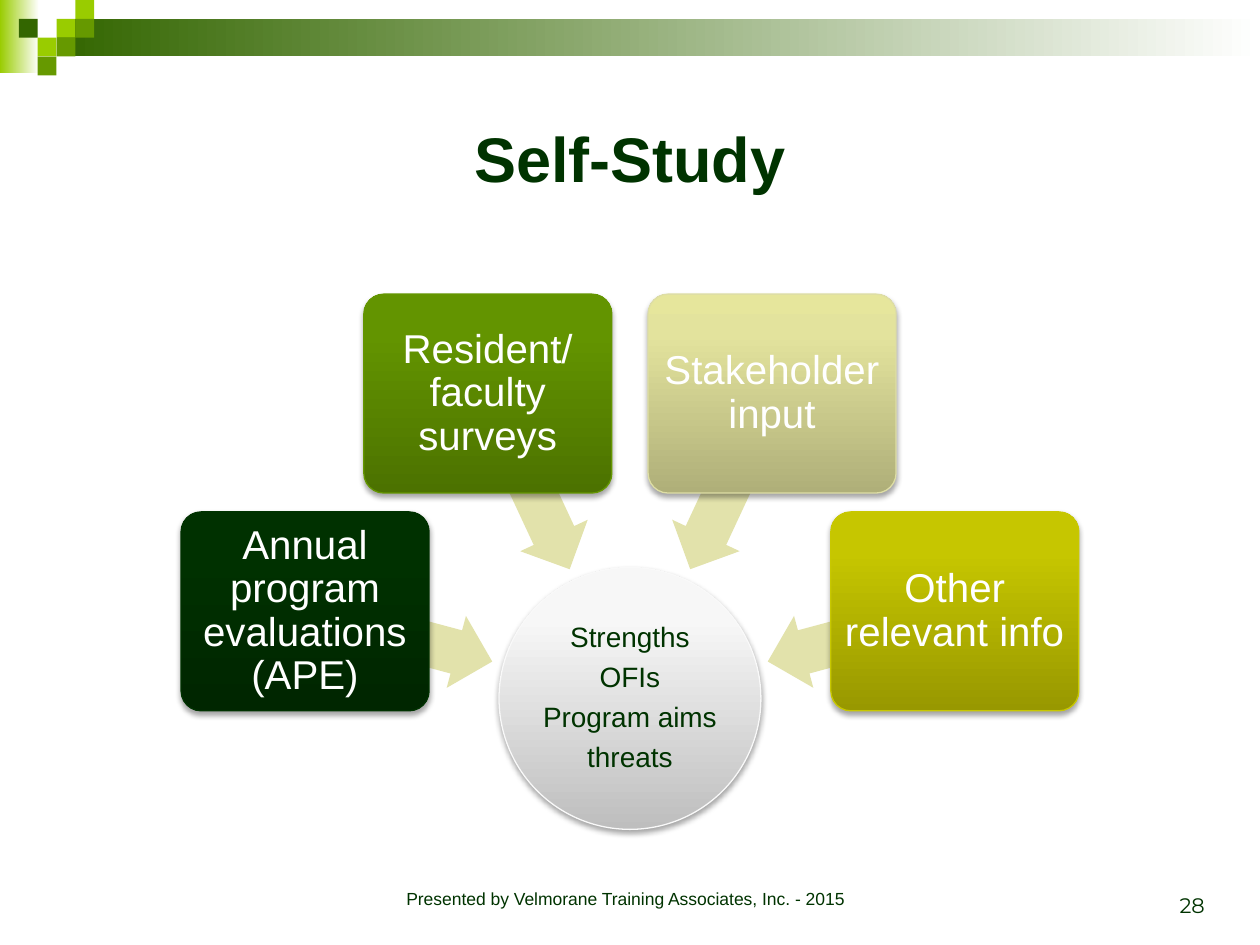
from dataclasses import dataclass
from math import cos, radians, sin

from lxml.etree import SubElement
from pptx import Presentation
from pptx.dml.color import RGBColor
from pptx.enum.shapes import MSO_SHAPE
from pptx.enum.text import MSO_ANCHOR, MSO_AUTO_SIZE, PP_ALIGN
from pptx.oxml.ns import qn
from pptx.util import Cm, Pt


@dataclass(frozen=True)
class Theme:
    font: str = "Arial"
    digit: str = "Montserrat"
    ink: str = "003300"
    white: str = "FFFFFF"
    lime: str = "99CC00"
    leaf: str = "669900"
    moss: str = "336600"
    arrow: str = "E2E2AB"
    title: int = 36
    box: int = 23
    hub: int = 16
    page: int = 12
    foot: int = 10


THEME = Theme()
HUB_X, HUB_Y, HUB_SIZE = 12.7, 14.08, 5.28
HUB_FILL = [(0, "BEBEBE"), (80, "F7F7F7"), (100, "F8F8F8")]
HUB_LINES = ["Strengths", "OFIs", "Program aims", "threats"]
BOX_W, BOX_H, BOX_RING = 5, 4.01, 6.78
ARROW_W, ARROW_H, ARROW_RING = 3.91, 1.5, 4.83
FIRST, STEP = 195, 50
BOXES = [
    ("Annual program evaluations (APE)", ["002600", "003100", "003200"], "003200"),
    ("Resident/faculty surveys", ["4C7200", "639400", "639500"], "649600"),
    ("Stakeholder input", ["AFAF79", "E3E39D", "E6E69C"], "DEDEA5"),
    ("Other relevant info", ["989800", "C6C600", "C7C700"], "C8C800"),
]
TILE = 0.38
TILES = [
    (3, 1, THEME.lime), (4, 0, THEME.lime), (4, 1, THEME.leaf), (2, 2, THEME.lime),
    (1, 1, THEME.moss), (3, 2, THEME.leaf), (2, 3, THEME.leaf),
]


def rgb(code):
    return RGBColor.from_string(code)


def write(frame, lines, size, color=THEME.ink, font=THEME.font, bold=False,
          align=PP_ALIGN.CENTER, anchor=MSO_ANCHOR.MIDDLE, inset=None,
          pitch=None, after=None):
    frame.word_wrap = True
    frame.auto_size = MSO_AUTO_SIZE.NONE
    frame.vertical_anchor = anchor
    if inset is not None:
        frame.margin_left = frame.margin_right = Cm(inset)
        frame.margin_top = frame.margin_bottom = Cm(inset)
    for i, line in enumerate(lines):
        para = frame.paragraphs[0] if i == 0 else frame.add_paragraph()
        para.alignment = align
        if pitch:
            para.line_spacing = pitch
        if after and i < len(lines) - 1:
            para.space_after = Pt(after)
        run = para.add_run()
        run.text = line
        run.font.name = font
        run.font.size = Pt(size)
        run.font.bold = bold
        run.font.color.rgb = rgb(color)


def add_shape(slide, kind, x, y, w, h, color=None):
    shape = slide.shapes.add_shape(kind, Cm(x), Cm(y), Cm(w), Cm(h))
    shape.shadow.inherit = False
    shape.line.fill.background()
    if color:
        shape.fill.solid()
        shape.fill.fore_color.rgb = rgb(color)
    return shape


def blend(shape, stops, angle):
    shape.fill.gradient()
    shape.fill.gradient_angle = angle
    holder = next(shape.element.spPr.iter(qn("a:gsLst")))
    for old in list(holder):
        holder.remove(old)
    for place, color in stops:
        stop = SubElement(holder, qn("a:gs"), pos=str(place * 1000))
        SubElement(stop, qn("a:srgbClr"), val=color)


def raise_up(shape, edge):
    shape.line.color.rgb = rgb(edge)
    shape.line.width = Pt(0.75)
    effects = shape.element.spPr.find(qn("a:effectLst"))
    shade = SubElement(effects, qn("a:outerShdw"), blurRad="40000", dist="23000",
                       dir="5400000", rotWithShape="0")
    tint = SubElement(shade, qn("a:srgbClr"), val="000000")
    SubElement(tint, qn("a:alpha"), val="35000")


def add_band(slide):
    for x, y, w, h, color in [(0, 0, 0.79, 1.48, THEME.lime),
                              (3 * TILE, TILE, 24.26, 2 * TILE, THEME.moss)]:
        bar = add_shape(slide, MSO_SHAPE.RECTANGLE, x, y, w, h)
        blend(bar, [(0, color), (100, THEME.white)], 0)
    for col, row, color in TILES:
        add_shape(slide, MSO_SHAPE.RECTANGLE, col * TILE, row * TILE, TILE, TILE, color)


def add_title(slide, text):
    title = slide.shapes.title
    title.left, title.top, title.width, title.height = Cm(1.27), Cm(1.27), Cm(22.86), Cm(3.81)
    write(title.text_frame, [text], THEME.title, bold=True)


def add_hub(slide):
    half = HUB_SIZE / 2
    hub = add_shape(slide, MSO_SHAPE.OVAL, HUB_X - half, HUB_Y - half, HUB_SIZE, HUB_SIZE)
    blend(hub, HUB_FILL, 90)
    raise_up(hub, "F9F9F9")
    write(hub.text_frame, HUB_LINES, THEME.hub, inset=0.03, pitch=0.9, after=5.6)


def add_spoke(slide, kind, angle, ring, w, h, color=None):
    x = HUB_X + ring * cos(radians(angle))
    y = HUB_Y + ring * sin(radians(angle))
    return add_shape(slide, kind, x - w / 2, y - h / 2, w, h, color)


def add_source(slide, angle, text, colors, edge):
    arrow = add_spoke(slide, MSO_SHAPE.LEFT_ARROW, angle, ARROW_RING,
                      ARROW_W, ARROW_H, THEME.arrow)
    arrow.rotation = angle
    arrow.adjustments[0], arrow.adjustments[1] = 0.6, 0.5
    box = add_spoke(slide, MSO_SHAPE.ROUNDED_RECTANGLE, angle, BOX_RING, BOX_W, BOX_H)
    box.adjustments[0] = 0.1
    blend(box, zip((0, 80, 100), colors), 90)
    raise_up(box, edge)
    write(box.text_frame, [text], THEME.box, THEME.white, inset=0.12, pitch=0.9)


def add_note(slide, x, y, w, h, text, size, **style):
    note = slide.shapes.add_textbox(Cm(x), Cm(y), Cm(w), Cm(h))
    write(note.text_frame, [text], size, **style)


def main():
    deck = Presentation()
    deck.slide_width, deck.slide_height = Cm(25.4), Cm(19.05)
    slide = deck.slides.add_slide(deck.slide_layouts[5])
    add_band(slide)
    add_title(slide, "Self-Study")
    add_hub(slide)
    for i, (text, colors, edge) in enumerate(BOXES):
        add_source(slide, FIRST + i * STEP, text, colors, edge)
    add_note(slide, 6.99, 17.78, 11.23, 0.84,
             "Presented by Velmorane Training Associates, Inc. - 2015",
             THEME.foot, anchor=MSO_ANCHOR.TOP)
    add_note(slide, 18.62, 17.35, 5.92, 1.27, "28", THEME.page, font=THEME.digit,
             align=PP_ALIGN.RIGHT, anchor=MSO_ANCHOR.BOTTOM)
    deck.save("out.pptx")


if __name__ == "__main__":
    main()
